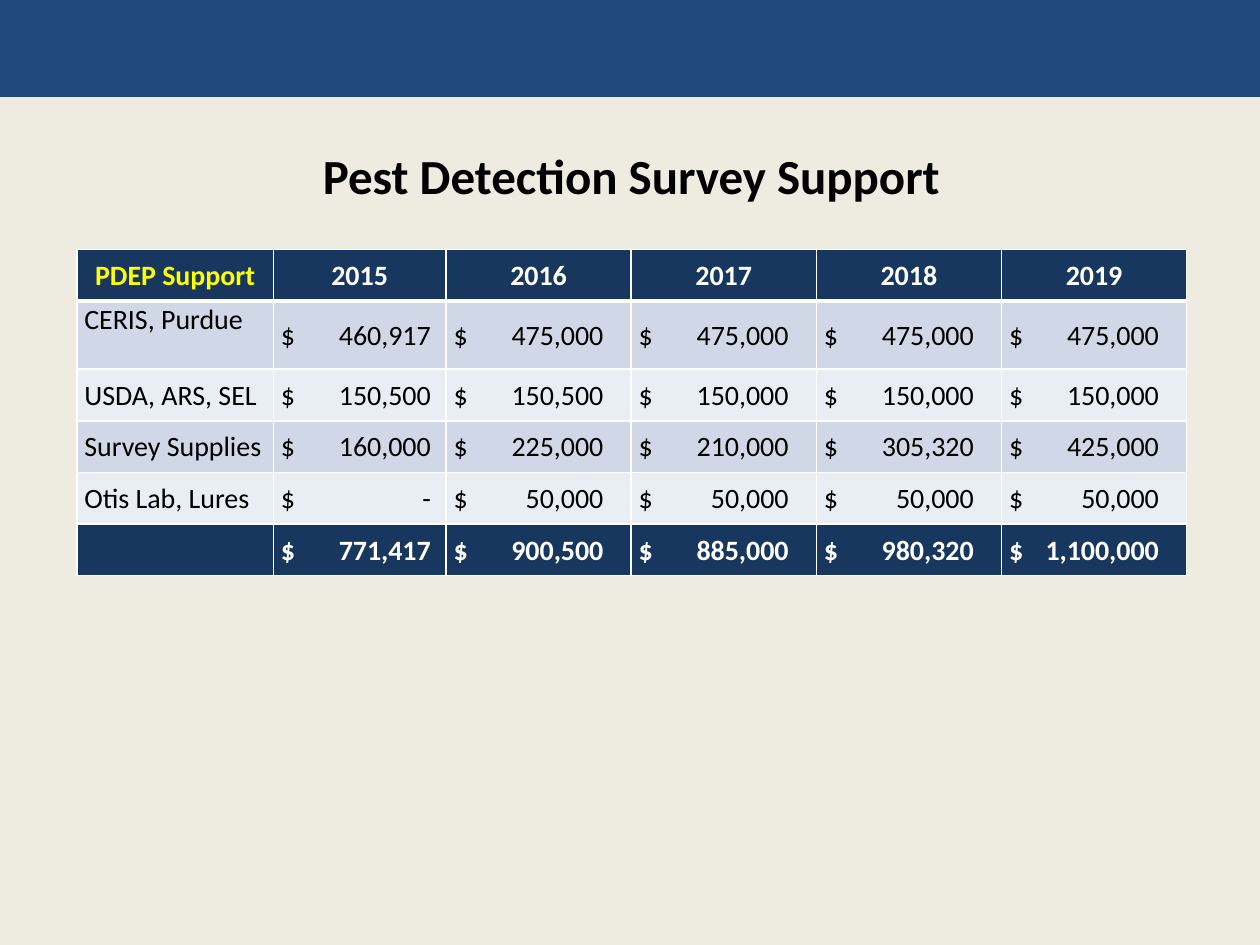
from dataclasses import dataclass

from lxml.etree import SubElement
from pptx import Presentation
from pptx.dml.color import RGBColor
from pptx.enum.shapes import MSO_SHAPE
from pptx.enum.text import MSO_ANCHOR, PP_ALIGN
from pptx.oxml.ns import qn
from pptx.util import Inches, Pt


@dataclass(frozen=True)
class Theme:
    """Colours, font and type sizes of the slide."""
    font: str = "Calibri"
    title_size: int = 28
    table_size: int = 16
    background: str = "EEECE1"
    band: str = "1F497D"
    dark: str = "17375E"
    stripes: tuple = ("D0D8E8", "E9EDF4")
    black: str = "000000"
    white: str = "FFFFFF"
    accent: str = "FFFF00"


THEME = Theme()
YEARS = ["2015", "2016", "2017", "2018", "2019"]
SUPPORT = [
    ("CERIS, Purdue", ["460,917", "475,000", "475,000", "475,000", "475,000"]),
    ("USDA, ARS, SEL", ["150,500", "150,500", "150,000", "150,000", "150,000"]),
    ("Survey Supplies", ["160,000", "225,000", "210,000", "305,320", "425,000"]),
    ("Otis Lab, Lures", ["-", "50,000", "50,000", "50,000", "50,000"]),
]
TOTALS = ["771,417", "900,500", "885,000", "980,320", "1,100,000"]
COLUMN_WIDTHS = [1.56, 1.37] + [1.47] * 4
ROW_HEIGHTS = [0.41, 0.54] + [0.41] * 4


def paint(target, color):
    """Give a shape, cell or background a solid fill."""
    target.fill.solid()
    target.fill.fore_color.rgb = RGBColor.from_string(color)


def add_span(para, text, size, color, bold=False):
    """Add one formatted run to a paragraph."""
    span = para.add_run()
    span.text = text
    span.font.name = THEME.font
    span.font.size = Pt(size)
    span.font.bold = bold
    span.font.color.rgb = RGBColor.from_string(color)


def add_band(page):
    """Draw the coloured band across the top."""
    band = page.shapes.add_shape(MSO_SHAPE.RECTANGLE, 0, 0, Inches(10), Inches(0.77))
    band.shadow.inherit = False
    paint(band, THEME.band)
    band.line.fill.background()


def add_title(page, text):
    """Add the centred slide title."""
    box = page.shapes.add_textbox(Inches(0.61), Inches(1), Inches(8.8), Inches(0.78))
    box.text_frame.word_wrap = True
    box.text_frame.vertical_anchor = MSO_ANCHOR.MIDDLE
    para = box.text_frame.paragraphs[0]
    para.alignment = PP_ALIGN.CENTER
    add_span(para, text, THEME.title_size, THEME.black, True)


def add_borders(cell, top=1, bottom=1):
    """Outline a cell in white with the given line widths in points."""
    properties = cell._tc.get_or_add_tcPr()
    for side, width in (("L", 1), ("R", 1), ("T", top), ("B", bottom)):
        line = SubElement(properties, qn(f"a:ln{side}"), w=str(Pt(width)))
        fill = SubElement(line, qn("a:solidFill"))
        SubElement(fill, qn("a:srgbClr"), val=THEME.white)


def style_cell(cell, fill, inset, top=1, bottom=1):
    """Set the borders, fill, margins and anchor of a cell."""
    add_borders(cell, top, bottom)
    paint(cell, fill)
    cell.margin_left = cell.margin_right = Inches(inset)
    cell.margin_top, cell.margin_bottom = Inches(0.01), 0
    cell.vertical_anchor = MSO_ANCHOR.MIDDLE


def add_amount(cell, amount, color, bold):
    """Write a dollar sign at the left and the amount at a right tab."""
    para = cell.text_frame.paragraphs[0]
    tabs = SubElement(para._p.get_or_add_pPr(), qn("a:tabLst"))
    SubElement(tabs, qn("a:tab"), pos=str(Inches(1.19)), algn="r")
    add_span(para, f"$\t{amount}", THEME.table_size, color, bold)


def fill_header(table):
    """Write the header row."""
    for column, text in enumerate(["PDEP Support"] + YEARS):
        cell = table.cell(0, column)
        style_cell(cell, THEME.dark, 0.01, bottom=3)
        para = cell.text_frame.paragraphs[0]
        para.alignment = PP_ALIGN.CENTER
        color = THEME.white if column else THEME.accent
        add_span(para, text, THEME.table_size, color, True)


def fill_row(table, row, label, amounts, fill, color, bold=False):
    """Write a label and its yearly amounts."""
    top = 3 if row == 1 else 1
    for column in range(len(COLUMN_WIDTHS)):
        style_cell(table.cell(row, column), fill, 0.06, top=top)
    if label:
        para = table.cell(row, 0).text_frame.paragraphs[0]
        add_span(para, label, THEME.table_size, color, bold)
    for column, amount in enumerate(amounts, 1):
        add_amount(table.cell(row, column), amount, color, bold)


def add_support_table(page):
    """Add the table of yearly support with its totals."""
    frame = page.shapes.add_table(
        len(ROW_HEIGHTS), len(COLUMN_WIDTHS), Inches(0.61), Inches(1.98),
        Inches(sum(COLUMN_WIDTHS)), Inches(sum(ROW_HEIGHTS)))
    table = frame.table
    table.first_row = table.horz_banding = False
    for column, width in zip(table.columns, COLUMN_WIDTHS):
        column.width = Inches(width)
    for row, height in zip(table.rows, ROW_HEIGHTS):
        row.height = Inches(height)
    fill_header(table)
    for row, (label, amounts) in enumerate(SUPPORT, 1):
        fill_row(table, row, label, amounts, THEME.stripes[(row - 1) % 2], THEME.black)
    fill_row(table, len(SUPPORT) + 1, "", TOTALS, THEME.dark, THEME.white, True)
    table.cell(1, 0).vertical_anchor = MSO_ANCHOR.TOP


def main():
    """Build and save the slide."""
    deck = Presentation()
    deck.slide_width, deck.slide_height = Inches(10), Inches(7.5)
    page = deck.slides.add_slide(deck.slide_layouts[6])
    paint(page.background, THEME.background)
    add_band(page)
    add_title(page, "Pest Detection Survey Support")
    add_support_table(page)
    deck.save("out.pptx")


if __name__ == "__main__":
    main()
